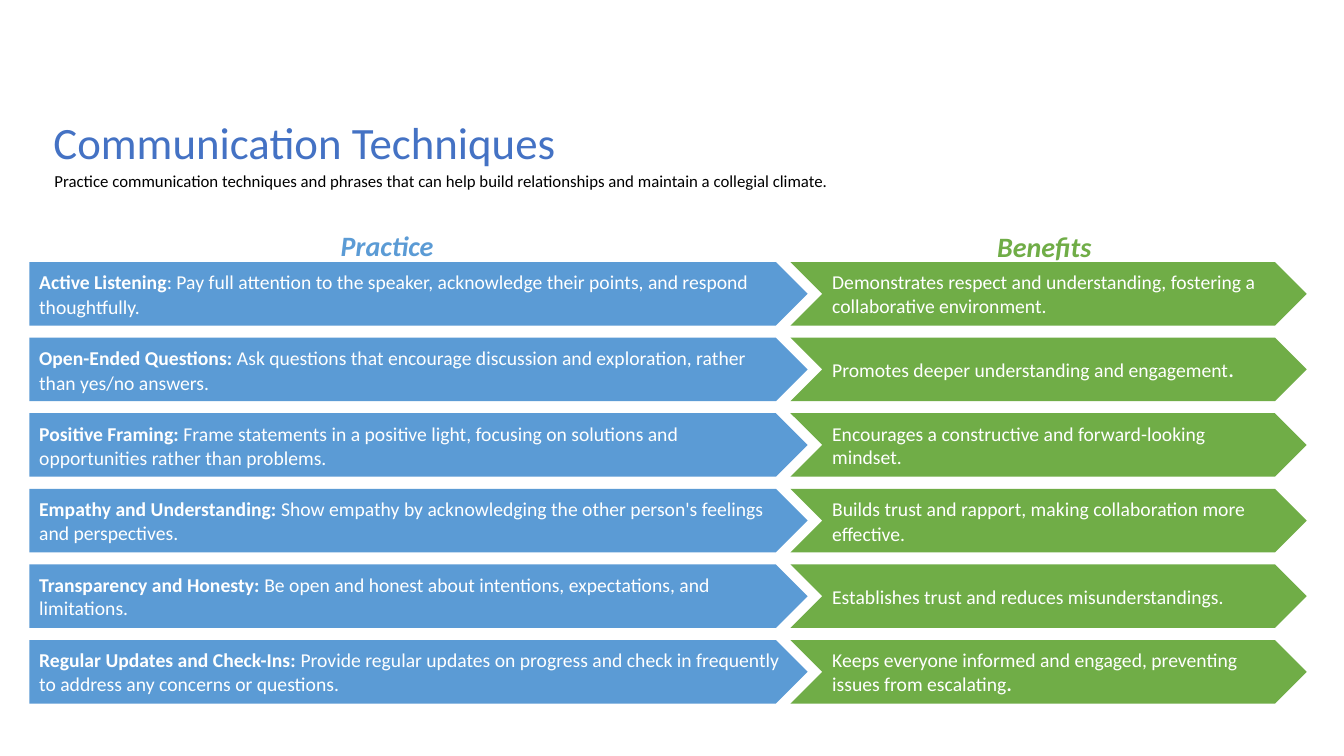
"""Build the Communication Techniques slide."""
import pptx
import pptx.util
import pptx.dml.color
import pptx.enum.shapes
import pptx.enum.text
import pptx.oxml.ns
import lxml.etree

Inches, Pt = pptx.util.Inches, pptx.util.Pt
SHAPE = pptx.enum.shapes.MSO_SHAPE
ANCHOR = pptx.enum.text.MSO_ANCHOR
COLORS = {"title": "4472C4", "text": "000000", "practice": "5B9BD5",
          "benefit": "70AD47", "white": "FFFFFF"}
ROW_TOP, ROW_PITCH, ROW_HEIGHT = 2.6, 0.75, 0.63
LOOSE = 1.06

TECHNIQUES = [
    ("Active Listening", ": Pay full attention to the speaker, acknowledge their points, and respond thoughtfully.", LOOSE,
     "Demonstrates respect and understanding, fostering a collaborative environment.", "", 1.0),
    ("Open-Ended Questions: ", "Ask questions that encourage discussion and exploration, rather than yes/no answers.", LOOSE,
     "Promotes deeper understanding and engagement", ".", 1.0),
    ("Positive Framing: ", "Frame statements in a positive light, focusing on solutions and opportunities rather than problems.", LOOSE,
     "Encourages a constructive and forward-looking mindset.", "", 1.0),
    ("Empathy and Understanding: ", "Show empathy by acknowledging the other person's feelings and perspectives.", 1.0,
     "Builds trust and rapport, making collaboration more effective.", "", LOOSE),
    ("Transparency and Honesty: ", "Be open and honest about intentions, expectations, and limitations.", 1.0,
     "Establishes trust and reduces misunderstandings.", "", 1.0),
    ("Regular Updates and Check-Ins: ", "Provide regular updates on progress and check in frequently to address any concerns or questions.", 1.0,
     "Keeps everyone informed and engaged, preventing issues from escalating", ".", 1.0),
]


class SlideBuilder:
    """Hold the slide and its text style, and add each kind of element."""

    def __init__(self, slide, font="Calibri"):
        self.slide = slide
        self.font = font

    def color(self, name):
        return pptx.dml.color.RGBColor.from_string(COLORS[name])

    def set_text(self, frame, runs, size, color, spacing=1.0, inset=0.1, anchor=ANCHOR.TOP):
        frame.word_wrap = True
        frame.auto_size = pptx.enum.text.MSO_AUTO_SIZE.NONE
        frame.vertical_anchor = anchor
        frame.margin_left = frame.margin_right = Inches(inset)
        frame.margin_top = frame.margin_bottom = Inches(inset)
        paragraph = frame.paragraphs[0]
        paragraph.alignment = pptx.enum.text.PP_ALIGN.LEFT
        paragraph.line_spacing = spacing
        paragraph.space_before = Pt(0)
        for text, bold in runs:
            run = paragraph.add_run()
            run.text = text
            run.font.bold = bold
        paragraph.font.name = self.font
        paragraph.font.size = Pt(size)
        paragraph.font.color.rgb = self.color(color)
        return paragraph

    def placeholder(self, index, box, text, size, color):
        holder = self.slide.placeholders[index]
        holder.left, holder.top, holder.width, holder.height = map(Inches, box)
        properties = holder.text_frame.paragraphs[0]._p.get_or_add_pPr()
        properties.set("marL", "0")
        properties.set("indent", "0")
        lxml.etree.SubElement(properties, pptx.oxml.ns.qn("a:buNone"))
        self.set_text(holder.text_frame, [(text, False)], size, color, spacing=0.9)
        holder.text_frame.margin_top = holder.text_frame.margin_bottom = Inches(0.05)

    def heading(self, left, top, text, color):
        box = self.slide.shapes.add_textbox(Inches(left), Inches(top), Inches(1.03), Inches(0.34))
        paragraph = self.set_text(box.text_frame, [(text, True)], 20, color, inset=0)
        paragraph.font.italic = True

    def arrow(self, preset, left, top, width, fill, runs, spacing):
        arrow = self.slide.shapes.add_shape(
            preset, Inches(left), Inches(top), Inches(width), Inches(ROW_HEIGHT))
        arrow.shadow.inherit = False
        arrow.fill.solid()
        arrow.fill.fore_color.rgb = self.color(fill)
        arrow.line.fill.background()
        self.set_text(arrow.text_frame, runs, 14, "white", spacing, anchor=ANCHOR.MIDDLE)


def main():
    deck = pptx.Presentation()
    deck.slide_width, deck.slide_height = Inches(13.33), Inches(7.5)
    builder = SlideBuilder(deck.slides.add_slide(deck.slide_layouts[1]))
    builder.placeholder(0, (0.43, 1.15, 12.24, 0.49), "Communication Techniques", 32, "title")
    builder.placeholder(
        1, (0.44, 1.67, 11.89, 0.34),
        "Practice communication techniques and phrases that can help build relationships "
        "and maintain a collegial climate.", 12, "text")
    for row, (practice, detail, practice_spacing, benefit, ending, benefit_spacing) in enumerate(TECHNIQUES):
        top = ROW_TOP + row * ROW_PITCH
        builder.arrow(SHAPE.PENTAGON, 0.29, top, 7.72, "practice",
                      [(practice, True), (detail, False)], practice_spacing)
        benefit_runs = [(benefit, False)] + ([(ending, True)] if ending else [])
        builder.arrow(SHAPE.CHEVRON, 7.84, top, 5.12, "benefit", benefit_runs, benefit_spacing)
    builder.heading(9.89, 2.28, "Benefits", "benefit")
    builder.heading(3.38, 2.27, "Practice", "practice")
    deck.save("out.pptx")


if __name__ == "__main__":
    main()
